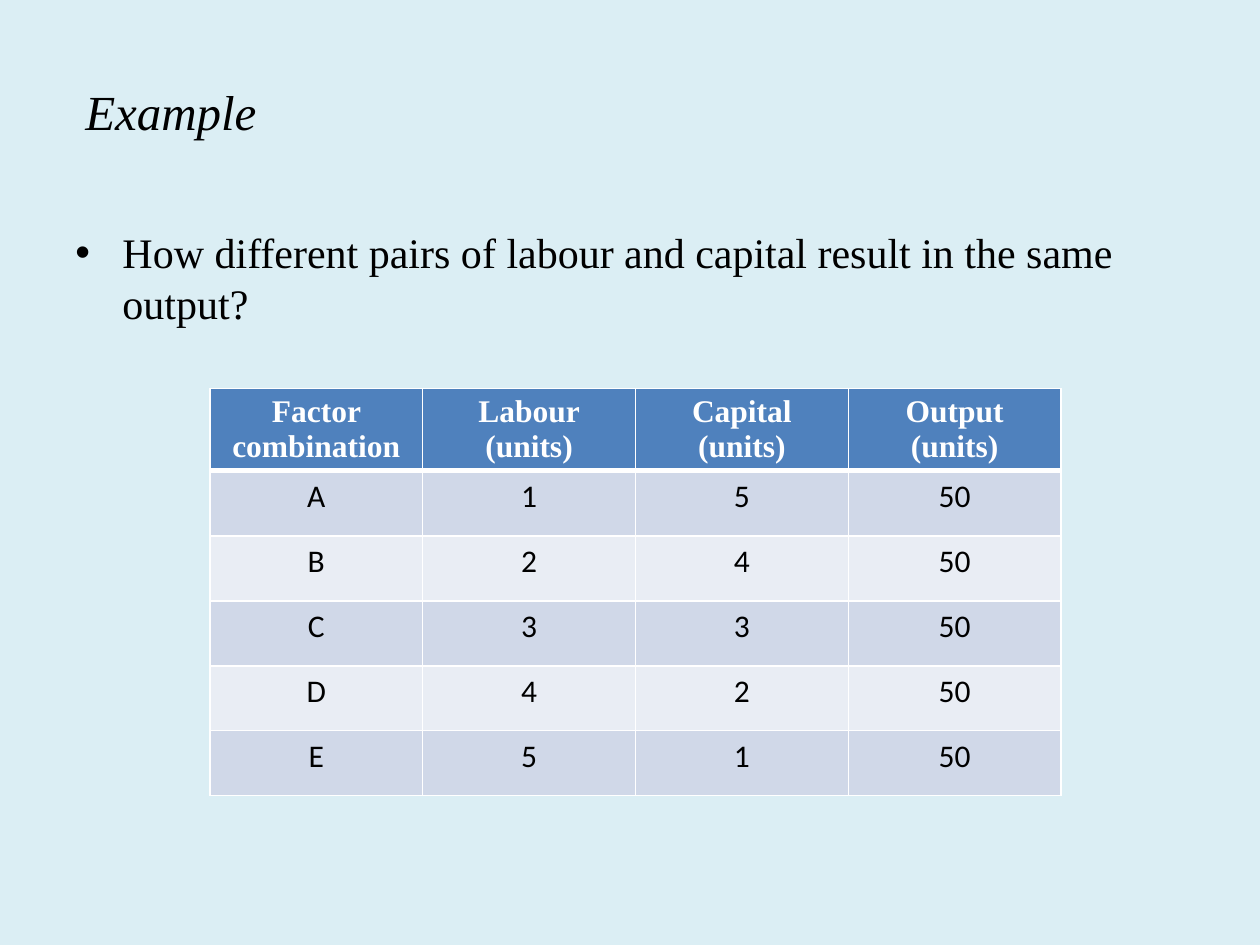
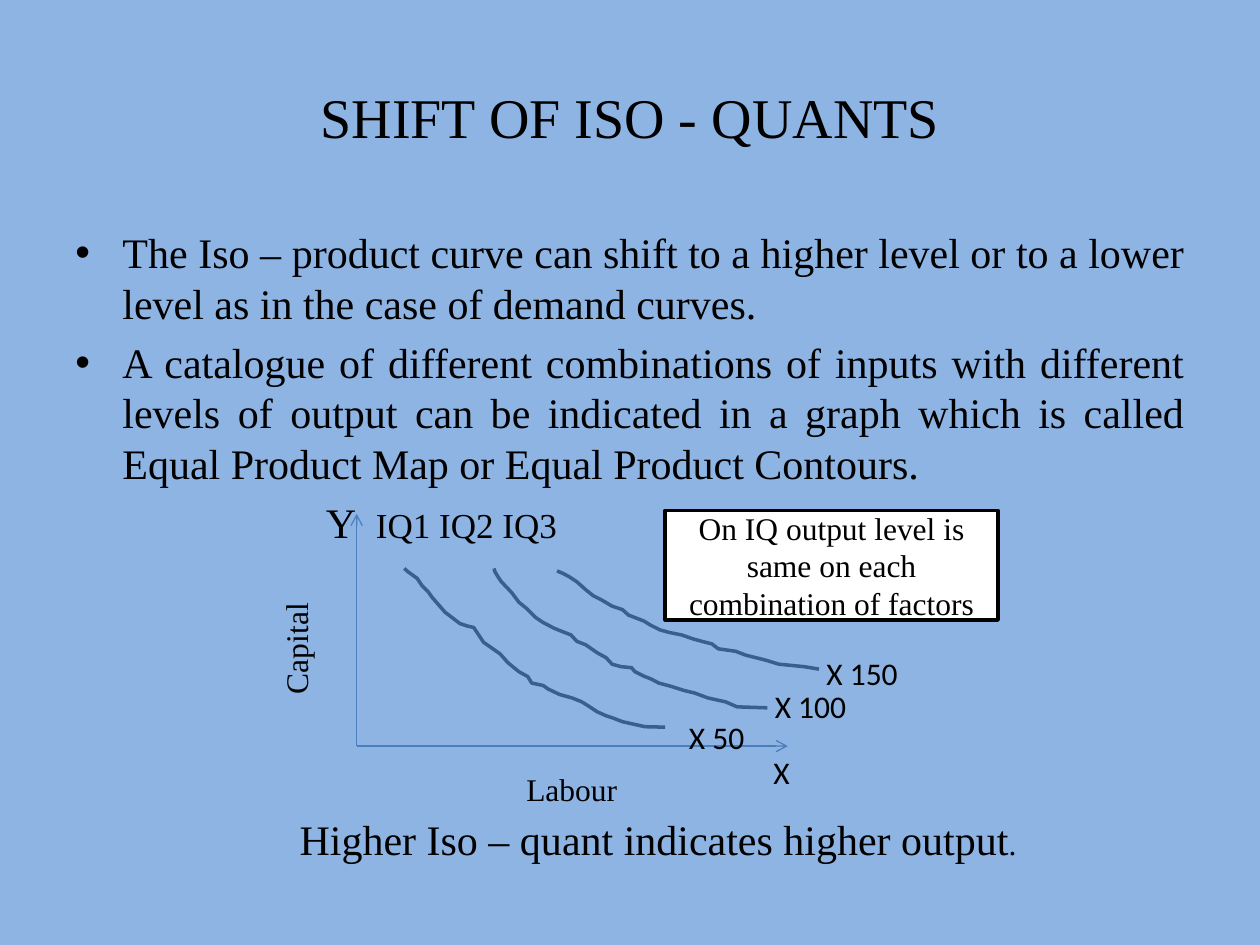
from lxml.etree import SubElement
from pptx import Presentation
from pptx.dml.color import RGBColor
from pptx.enum.shapes import MSO_CONNECTOR, MSO_SHAPE
from pptx.enum.text import MSO_ANCHOR, MSO_AUTO_SIZE, PP_ALIGN
from pptx.oxml import parse_xml
from pptx.oxml.ns import nsdecls, qn
from pptx.util import Cm, Pt

SERIF = "Times New Roman"
SANS = "Calibri"
BLACK = "000000"
WHITE = "FFFFFF"
HEADER_BLUE = "4F81BD"
AXIS_BLUE = "4B7EBC"
CURVE_BLUE = "3A5F8C"
ROW_FILLS = ["E9EDF4", "D0D8E8"]


def color(hex_string):
    return RGBColor.from_string(hex_string)


def add_text(slide, box, paragraphs, size, font=SERIF, align=PP_ALIGN.LEFT, wrap=True, bullets=False):
    shape = slide.shapes.add_textbox(*[Cm(value) for value in box])
    frame = shape.text_frame
    frame.word_wrap = wrap
    frame.auto_size = MSO_AUTO_SIZE.NONE if wrap else MSO_AUTO_SIZE.SHAPE_TO_FIT_TEXT
    for index, text in enumerate(paragraphs):
        paragraph = frame.paragraphs[0] if index == 0 else frame.add_paragraph()
        paragraph.text = text
        paragraph.alignment = align
        if bullets:
            properties = paragraph._p.get_or_add_pPr()
            properties.set("marL", str(Cm(0.95)))
            properties.set("indent", str(Cm(-0.95)))
            SubElement(properties, qn("a:buFont")).set("typeface", "Arial")
            SubElement(properties, qn("a:buChar")).set("char", "•")
            if index:
                paragraph.space_before = Pt(5)
        paragraph.font.name = font
        paragraph.font.size = Pt(size)
        paragraph.font.color.rgb = color(BLACK)
    return shape


presentation = Presentation()
presentation.slide_width = Cm(25.4)
presentation.slide_height = Cm(19.05)

slides = []
for background in ["DBEEF4", "8EB4E3"]:
    slide = presentation.slides.add_slide(presentation.slide_layouts[6])
    slide.background.fill.solid()
    slide.background.fill.fore_color.rgb = color(background)
    slides.append(slide)
example_slide, shift_slide = slides

title = add_text(example_slide, (1.47, 0.64, 22.86, 3.18), ["Example"], 28)
title.text_frame.vertical_anchor = MSO_ANCHOR.MIDDLE
title.text_frame.paragraphs[0].font.italic = True
question = "How different pairs of labour and capital result in the same output?"
add_text(example_slide, (1.27, 4.45, 22.86, 12.57), [question], 24, bullets=True)

rows = [["Factor combination", "Labour\n(units)", "Capital\n(units)", "Output\n(units)"]]
for index, name in enumerate("ABCDE"):
    rows.append([name, str(index + 1), str(5 - index), "50"])

table = example_slide.shapes.add_table(6, 4, Cm(4.23), Cm(7.83), Cm(17.16), Cm(8.2)).table
for column in table.columns:
    column.width = Cm(4.29)
for row_index, values in enumerate(rows):
    is_header = row_index == 0
    table.rows[row_index].height = Cm(1.65 if is_header else 1.31)
    for column_index, value in enumerate(values):
        cell = table.cell(row_index, column_index)
        cell.text = value
        for paragraph in cell.text_frame.paragraphs:
            paragraph.alignment = PP_ALIGN.CENTER
            paragraph.font.name = SERIF if is_header else SANS
            paragraph.font.size = Pt(18)
            paragraph.font.bold = is_header
            paragraph.font.color.rgb = color(WHITE if is_header else BLACK)
        cell_properties = cell._tc.get_or_add_tcPr()
        for side in ["lnL", "lnR", "lnT", "lnB"]:
            thick = (is_header and side == "lnB") or (row_index == 1 and side == "lnT")
            border = SubElement(cell_properties, qn("a:" + side), w=str(Pt(3 if thick else 1)))
            SubElement(SubElement(border, qn("a:solidFill")), qn("a:srgbClr")).set("val", WHITE)
        cell.fill.solid()
        cell.fill.fore_color.rgb = color(HEADER_BLUE if is_header else ROW_FILLS[row_index % 2])

title = add_text(shift_slide, (1.27, 0.76, 22.86, 3.18), ["SHIFT OF ISO - QUANTS"], 32, align=PP_ALIGN.CENTER)
title.text_frame.vertical_anchor = MSO_ANCHOR.MIDDLE

statements = [
    "The Iso – product curve can shift to a higher level or to a lower level as in the case of demand curves.",
    "A catalogue of different combinations of inputs with different levels of output can be indicated "
    "in a graph which is called Equal Product Map or Equal Product Contours.",
]
body = add_text(shift_slide, (1.27, 4.45, 22.86, 13.77), statements, 24, align=PP_ALIGN.JUSTIFY, bullets=True)
curve_names = body.text_frame.add_paragraph()
curve_names.space_before = Pt(5)
properties = curve_names._p.get_or_add_pPr()
properties.set("marL", str(Cm(6.06)))
properties.set("indent", str(Cm(-1.01)))
SubElement(properties, qn("a:buNone"))
curve_names.font.name = SERIF
curve_names.font.color.rgb = color(BLACK)
for text, size in [("Y\t", 24), ("IQ1 IQ2 IQ3", 20)]:
    run = curve_names.add_run()
    run.text = text
    run.font.size = Pt(size)

for end_x, end_y in [(7.19, 10.36), (15.88, 15.04)]:
    axis = shift_slide.shapes.add_connector(MSO_CONNECTOR.STRAIGHT, Cm(7.19), Cm(15.04), Cm(end_x), Cm(end_y))
    axis.line.color.rgb = color(AXIS_BLUE)
    axis.line.width = Pt(0.75)
    axis.line._get_or_add_ln().append(parse_xml(f'<a:tailEnd {nsdecls("a")} type="arrow"/>'))
    SubElement(axis._element.spPr, qn("a:effectLst"))

for text, left, top, width in [
    ("X 150", 16.41, 13.06, 1.98),
    ("X 100", 15.37, 13.72, 1.98),
    ("X 50", 13.64, 14.35, 1.65),
    ("X", 15.34, 15.06, 0.84),
]:
    add_text(shift_slide, (left, top, width, 1.02), [text], 18, font=SANS, wrap=False)

isoquants = [
    [(1341, 1466), (1300, 1465), (1255, 1455), (1237, 1448), (1222, 1443), (1204, 1435), (1189, 1425),
     (1173, 1415), (1153, 1407), (1128, 1400), (1105, 1389), (1095, 1382), (1072, 1377), (1064, 1364),
     (1046, 1354), (1024, 1336), (1008, 1318), (975, 1295), (955, 1265), (942, 1262), (927, 1257),
     (897, 1234), (884, 1219), (871, 1204), (864, 1194), (851, 1181), (841, 1166), (823, 1153), (815, 1146)],
    [(1547, 1427), (1486, 1425), (1463, 1415), (1427, 1407), (1400, 1397), (1379, 1392), (1354, 1384),
     (1328, 1377), (1313, 1369), (1300, 1364), (1280, 1354), (1273, 1346), (1252, 1344), (1234, 1339),
     (1222, 1326), (1204, 1316), (1181, 1300), (1163, 1293), (1151, 1280), (1133, 1273), (1118, 1267),
     (1095, 1255), (1080, 1245), (1062, 1227), (1046, 1214), (1031, 1194), (1011, 1173), (1006, 1166),
     (998, 1153), (996, 1146)],
    [(1651, 1349), (1621, 1344), (1570, 1339), (1544, 1331), (1524, 1326), (1504, 1321), (1483, 1313),
     (1448, 1308), (1435, 1298), (1415, 1293), (1397, 1288), (1374, 1280), (1349, 1275), (1331, 1270),
     (1311, 1260), (1298, 1252), (1267, 1240), (1255, 1229), (1234, 1222), (1212, 1209), (1196, 1201),
     (1181, 1189), (1163, 1173), (1148, 1163), (1135, 1156), (1123, 1151)],
]
for points in isoquants:
    builder = shift_slide.shapes.build_freeform(*points[0], scale=Cm(0.01))
    builder.add_line_segments(points[1:], close=False)
    curve = builder.convert_to_shape()
    curve.shadow.inherit = False
    curve.fill.background()
    curve.line.color.rgb = color(CURVE_BLUE)
    curve.line.width = Pt(2)

add_text(shift_slide, (10.36, 15.39, 2.36, 1.02), ["Labour"], 18, wrap=False)
capital = add_text(shift_slide, (4.66, 12.43, 2.6, 1.02), ["Capital"], 18)
capital.rotation = 270
conclusion = add_text(
    shift_slide, (5.79, 16.28, 15.09, 1.27), ["Higher Iso – quant indicates higher output"], 24, wrap=False
)
full_stop = conclusion.text_frame.paragraphs[0].add_run()
full_stop.text = "."
full_stop.font.size = Pt(18)

callout = shift_slide.shapes.add_shape(MSO_SHAPE.RECTANGLE, Cm(13.41), Cm(10.29), Cm(6.71), Cm(2.21))
callout.shadow.inherit = False
callout.fill.solid()
callout.fill.fore_color.rgb = color(WHITE)
callout.line.color.rgb = color(BLACK)
callout.line.width = Pt(2)
callout.text_frame.word_wrap = True
callout.text_frame.vertical_anchor = MSO_ANCHOR.MIDDLE
paragraph = callout.text_frame.paragraphs[0]
paragraph.text = "On IQ output level is same on each combination of factors"
paragraph.alignment = PP_ALIGN.CENTER
paragraph.font.name = SERIF
paragraph.font.size = Pt(18)
paragraph.font.color.rgb = color(BLACK)

presentation.save("out.pptx")
